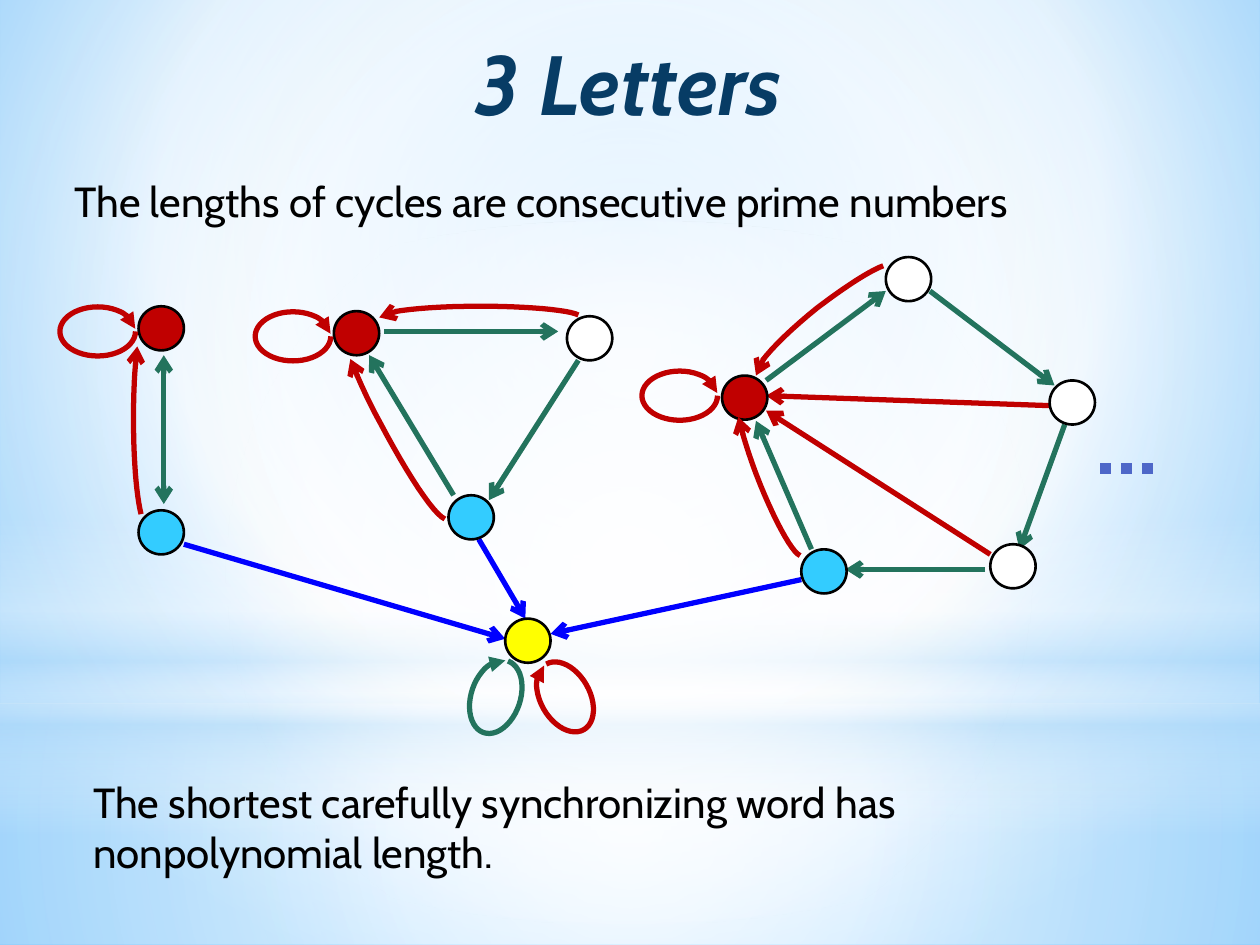
from dataclasses import dataclass
from typing import NamedTuple, Optional

from lxml.etree import SubElement
from pptx import Presentation
from pptx.dml.color import RGBColor
from pptx.enum.dml import MSO_LINE as Dash
from pptx.enum.shapes import MSO_CONNECTOR as Connector, MSO_SHAPE as Preset
from pptx.enum.text import MSO_ANCHOR as Anchor, MSO_AUTO_SIZE as AutoSize, PP_ALIGN as Align
from pptx.oxml import parse_xml
from pptx.oxml.ns import nsdecls, qn
from pptx.util import Pt


@dataclass(frozen=True)
class Theme:
    font: str = "Cabin"
    title_size: float = 48
    body_size: float = 24
    title: str = "073C65"
    black: str = "000000"
    white: str = "FFFFFF"
    red: str = "C00000"
    green: str = "23735D"
    blue: str = "0000FF"
    cyan: str = "33CCFF"
    yellow: str = "FFFF00"
    dots: str = "4E67C8"
    sky: str = "B4DCFA"
    edge_width: float = 3
    node_width: float = 1.5


THEME = Theme()
NODE_WIDTH, NODE_HEIGHT = 25.9, 25.2
LOOP_WIDTH, LOOP_HEIGHT = 28.1, 43.2
CURVE_STEPS = 12


class Gradient(NamedTuple):
    stops: list  # (position %, colour, opacity %)
    focus: Optional[tuple] = None  # left, top, right, bottom %; None runs downwards


class Glow(NamedTuple):
    preset: Preset
    top: float
    height: float
    gradient: Gradient


class Node(NamedTuple):
    left: float
    top: float
    color: str


class Edge(NamedTuple):
    start: tuple
    end: tuple
    color: str
    both_ways: bool = False


class Loop(NamedTuple):
    center: tuple
    rotation: float
    color: str


CENTER = (50, 50, 50, 50)
BACKGROUND = Gradient([(0, "9ED5FF", 100), (60, THEME.white, 100), (100, "5BB9FF", 100)],
                      (20, 10, 20, 60))
GLOWS = [
    Glow(Preset.RECTANGLE, 401.8, 138.2, Gradient(
        [(0, THEME.white, 91), (37, THEME.white, 76), (100, THEME.sky, 79)], CENTER)),
    Glow(Preset.RECTANGLE, 0, 401.8, Gradient(
        [(0, THEME.white, 89), (48, THEME.white, 62), (100, THEME.sky, 79)], CENTER)),
    Glow(Preset.RECTANGLE, 296.6, 180, Gradient(
        [(0, THEME.white, 0), (29, THEME.white, 30), (45, THEME.sky, 40),
         (55, THEME.white, 26), (65, THEME.sky, 60), (100, THEME.white, 0)])),
    Glow(Preset.OVAL, 126, 401.8, Gradient(
        [(0, THEME.white, 100), (56, THEME.white, 0)], CENTER)),
]
NODES = [
    Node(79.2, 175, THEME.red), Node(79.2, 291.6, THEME.cyan),
    Node(190.8, 177.8, THEME.red), Node(324, 180.7, THEME.white), Node(256.3, 283, THEME.cyan),
    Node(412.6, 214.6, THEME.red), Node(506.2, 146.9, THEME.white),
    Node(599.8, 217.4, THEME.white), Node(565.9, 311, THEME.white),
    Node(457.9, 313.9, THEME.cyan), Node(288.7, 353.5, THEME.yellow),
]
EDGES = [
    Edge((93.6, 288), (93.6, 203), THEME.green, both_ways=True),
    Edge((219.6, 189.4), (319, 189.4), THEME.green),
    Edge((330.5, 205.9), (279.4, 285.8), THEME.green),
    Edge((259.2, 283), (211, 203), THEME.green),
    Edge((437.8, 217.4), (506.2, 166.3), THEME.green),
    Edge((531.4, 166.3), (602.6, 220.3), THEME.green),
    Edge((608.4, 242.6), (582.5, 313.9), THEME.green),
    Edge((563, 325.4), (483.1, 325.4), THEME.green),
    Edge((463.7, 313.9), (432, 240.5), THEME.green),
    Edge((105.1, 311), (288.7, 365), THEME.blue),
    Edge((273.6, 308.2), (300.2, 353.5), THEME.blue),
    Edge((457.9, 331.2), (314.6, 362.2), THEME.blue),
    Edge((565.9, 316.8), (437.8, 234.7), THEME.red),
    Edge((599.8, 231.8), (437.8, 226.1), THEME.red),
]
LOOPS = [
    Loop((283.3, 398.2), 18.8, THEME.green), Loop((322.9, 398.2), 330.2, THEME.red),
    Loop((55.8, 189.4), 90, THEME.red), Loop((167.4, 192.2), 90, THEME.red),
    Loop((388.4, 226.1), 90, THEME.red),
]
# Each bend is two joined cubic curves: start, then two controls and an end per curve.
BENDS = [
    [(457.2, 317.5), (452.2, 315.4), (441.4, 295.2), (432, 270.7),
     (427.7, 259.2), (424.1, 247.7), (421.9, 238.3)],
    [(80.6, 293.8), (77.8, 282.2), (76.3, 261.4), (76.3, 239),
     (76.3, 223.9), (77, 209.5), (78.5, 198)],
    [(254.2, 296.6), (247.7, 293.8), (232.6, 270.7), (217.4, 241.9),
     (210.2, 229), (204.5, 216), (200.2, 205.2)],
    [(330.5, 180), (324.7, 177.1), (301, 175), (274.3, 175),
     (243.4, 175), (218.2, 177.8), (216.7, 181.4)],
    [(504.7, 151.9), (495.4, 155.5), (481.7, 164.9), (467.3, 175.7),
     (445.7, 193), (429.8, 210.2), (432, 214.6)],
]


def gradient_xml(gradient: Gradient):
    stops = "".join(
        f'<a:gs pos="{position * 1000}"><a:srgbClr val="{color}">'
        f'<a:alpha val="{opacity * 1000}"/></a:srgbClr></a:gs>'
        for position, color, opacity in gradient.stops)
    if gradient.focus:
        sides = " ".join(f'{side}="{value * 1000}"' for side, value in zip("ltrb", gradient.focus))
        direction = f'<a:path path="circle"><a:fillToRect {sides}/></a:path>'
    else:
        direction = '<a:lin ang="5400000" scaled="0"/>'
    return parse_xml(f'<a:gradFill {nsdecls("a")} rotWithShape="1">'
                     f'<a:gsLst>{stops}</a:gsLst>{direction}</a:gradFill>')


def set_gradient(fill, properties, gradient: Gradient) -> None:
    fill.background()
    properties.replace(properties.find(qn("a:noFill")), gradient_xml(gradient))


def style_line(shape, color: str, width: float, **ends: str) -> None:
    """Set colour and width, and arrowheads given as headEnd or tailEnd."""
    shape.line.color.rgb = RGBColor.from_string(color)
    shape.line.width = Pt(width)
    outline = shape.element.spPr.find(qn("a:ln"))
    for end, kind in ends.items():
        SubElement(outline, qn(f"a:{end}"), type=kind)


def add_preset(slide, preset: Preset, left: float, top: float, width: float, height: float):
    shape = slide.shapes.add_shape(preset, Pt(left), Pt(top), Pt(width), Pt(height))
    shape.shadow.inherit = False
    return shape


def add_glow(slide, glow: Glow) -> None:
    shape = add_preset(slide, glow.preset, 0, glow.top, 720, glow.height)
    set_gradient(shape.fill, shape.element.spPr, glow.gradient)
    shape.line.fill.background()


def add_node(slide, node: Node) -> None:
    shape = add_preset(slide, Preset.OVAL, node.left, node.top, NODE_WIDTH, NODE_HEIGHT)
    shape.fill.solid()
    shape.fill.fore_color.rgb = RGBColor.from_string(node.color)
    style_line(shape, THEME.black, THEME.node_width)


def add_line(slide, start: tuple, end: tuple):
    line = slide.shapes.add_connector(Connector.STRAIGHT, *map(Pt, start + end))
    SubElement(line.element.spPr, qn("a:effectLst"))
    return line


def add_edge(slide, edge: Edge) -> None:
    ends = {"headEnd": "arrow"} if edge.both_ways else {}
    style_line(add_line(slide, edge.start, edge.end), edge.color, THEME.edge_width,
               **ends, tailEnd="arrow")


def add_loop(slide, loop: Loop) -> None:
    x, y = loop.center
    shape = add_preset(slide, Preset.ARC, x - LOOP_WIDTH / 2, y - LOOP_HEIGHT / 2,
                       LOOP_WIDTH, LOOP_HEIGHT)
    for index, degrees in enumerate((270, 266)):
        shape.adjustments[index] = degrees * 0.6
    shape.rotation = loop.rotation
    shape.fill.background()
    style_line(shape, loop.color, THEME.edge_width, tailEnd="triangle")


def cubic_point(controls: list, t: float) -> tuple:
    weights = ((1 - t) ** 3, 3 * t * (1 - t) ** 2, 3 * t ** 2 * (1 - t), t ** 3)
    return tuple(Pt(sum(w * value for w, value in zip(weights, axis))) for axis in zip(*controls))


def add_bend(slide, bend: list) -> None:
    builder = slide.shapes.build_freeform(*map(Pt, bend[0]))
    builder.add_line_segments(
        [cubic_point(bend[first:first + 4], step / CURVE_STEPS)
         for first in (0, 3) for step in range(1, CURVE_STEPS + 1)], close=False)
    shape = builder.convert_to_shape()
    shape.shadow.inherit = False
    shape.fill.background()
    style_line(shape, THEME.red, THEME.edge_width, tailEnd="arrow")


def write(shape, text: str, size: float, color: str, **formats) -> None:
    frame = shape.text_frame
    frame.word_wrap = True
    frame.vertical_anchor = Anchor.TOP
    frame.text = text
    font = frame.paragraphs[0].runs[0].font
    for name, value in {"name": THEME.font, "size": Pt(size), **formats}.items():
        setattr(font, name, value)
    font.color.rgb = RGBColor.from_string(color)


def add_statement(slide, text: str, *box: float) -> None:
    shape = slide.shapes.add_textbox(*map(Pt, box))
    write(shape, text, THEME.body_size, THEME.black)
    shape.text_frame.auto_size = AutoSize.SHAPE_TO_FIT_TEXT


def place_title(slide, text: str) -> None:
    title = slide.shapes.title
    for name, value in {"left": 35.3, "top": 14.4, "width": 648, "height": 55.4}.items():
        setattr(title, name, Pt(value))
    write(title, text, THEME.title_size, THEME.title, bold=True, italic=True)
    title.text_frame.auto_size = AutoSize.NONE
    title.text_frame.paragraphs[0].alignment = Align.CENTER
    title.element.getparent().append(title.element)  # in front of the glows


def main() -> None:
    presentation = Presentation()
    presentation.slide_width, presentation.slide_height = Pt(720), Pt(540)
    slide = presentation.slides.add_slide(presentation.slide_layouts[5])
    background = slide.background.fill
    background.solid()
    set_gradient(background, slide.element.find(f".//{qn('p:bgPr')}"), BACKGROUND)
    for draw, items in ((add_glow, GLOWS), (add_edge, EDGES), (add_node, NODES),
                        (add_loop, LOOPS), (add_bend, BENDS)):
        for item in items:
            draw(slide, item)
    add_statement(slide, "The lengths of cycles are consecutive prime numbers",
                  35.3, 96.5, 639.4, 36)
    place_title(slide, "3 Letters")
    add_statement(slide, "The shortest carefully synchronizing word has nonpolynomial length.",
                  46.1, 439.9, 602.6, 65.5)
    dots = add_line(slide, (628.6, 267.8), (661.7, 267.8))
    style_line(dots, THEME.dots, 6)
    dots.line.dash_style = Dash.ROUND_DOT
    presentation.save("out.pptx")


if __name__ == "__main__":
    main()
